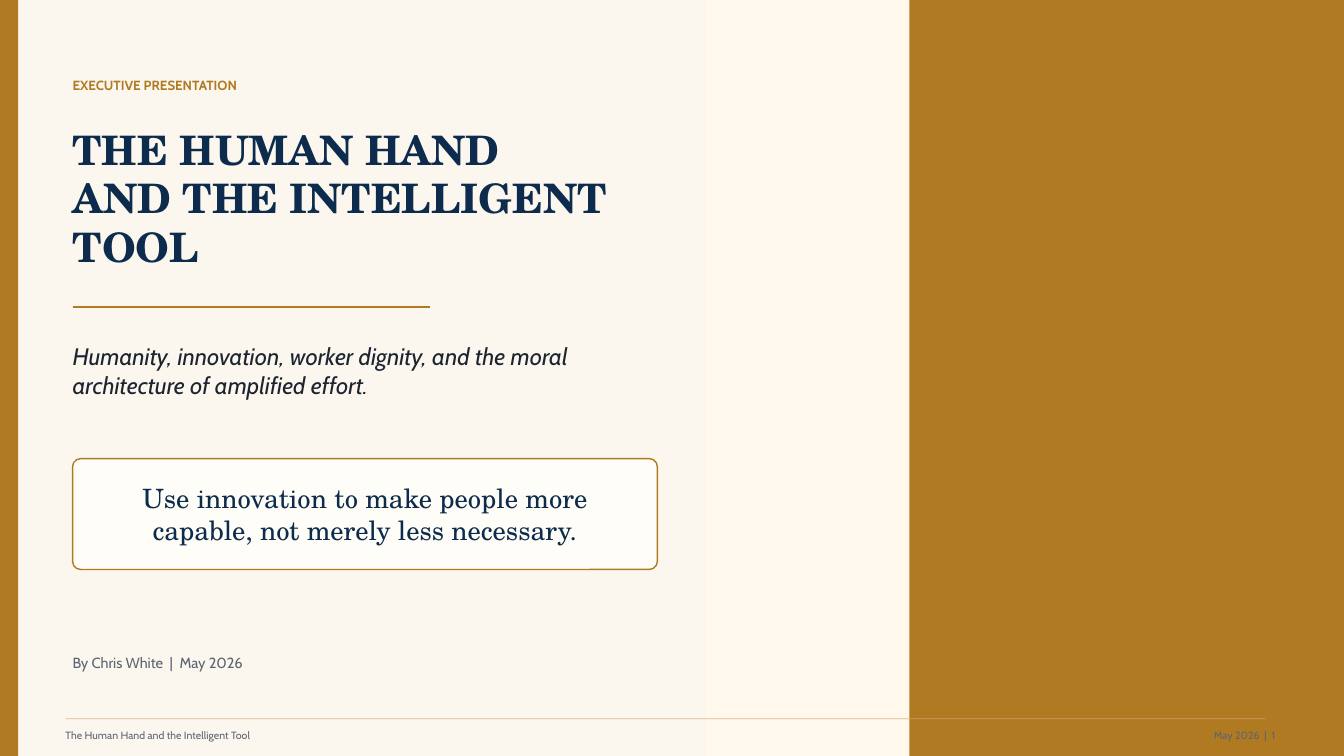
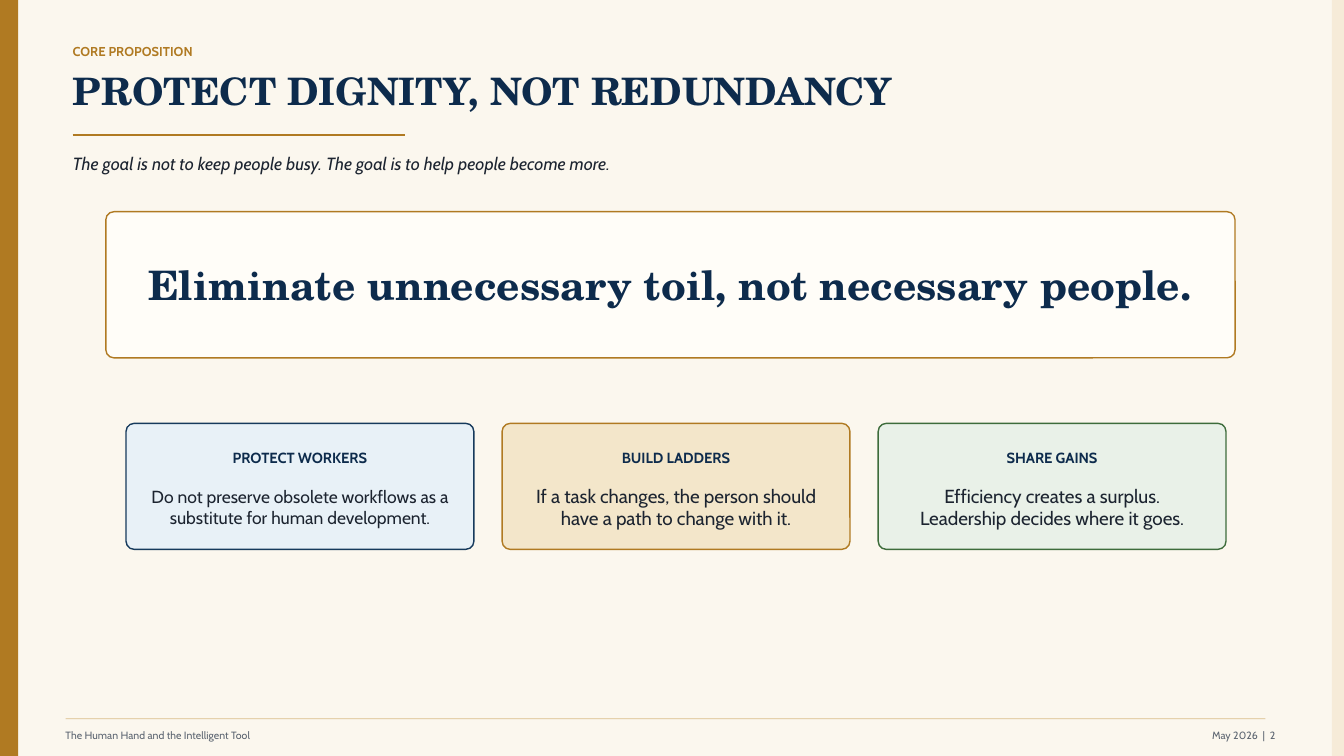
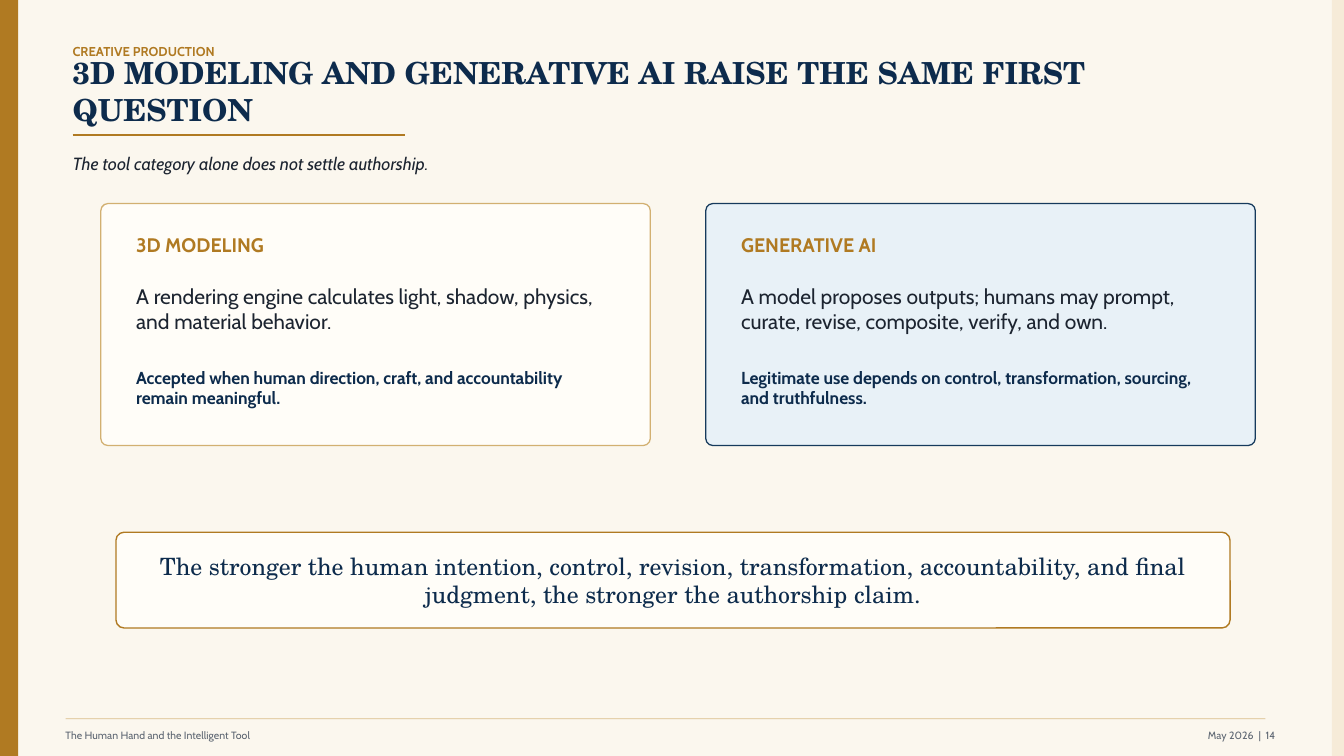
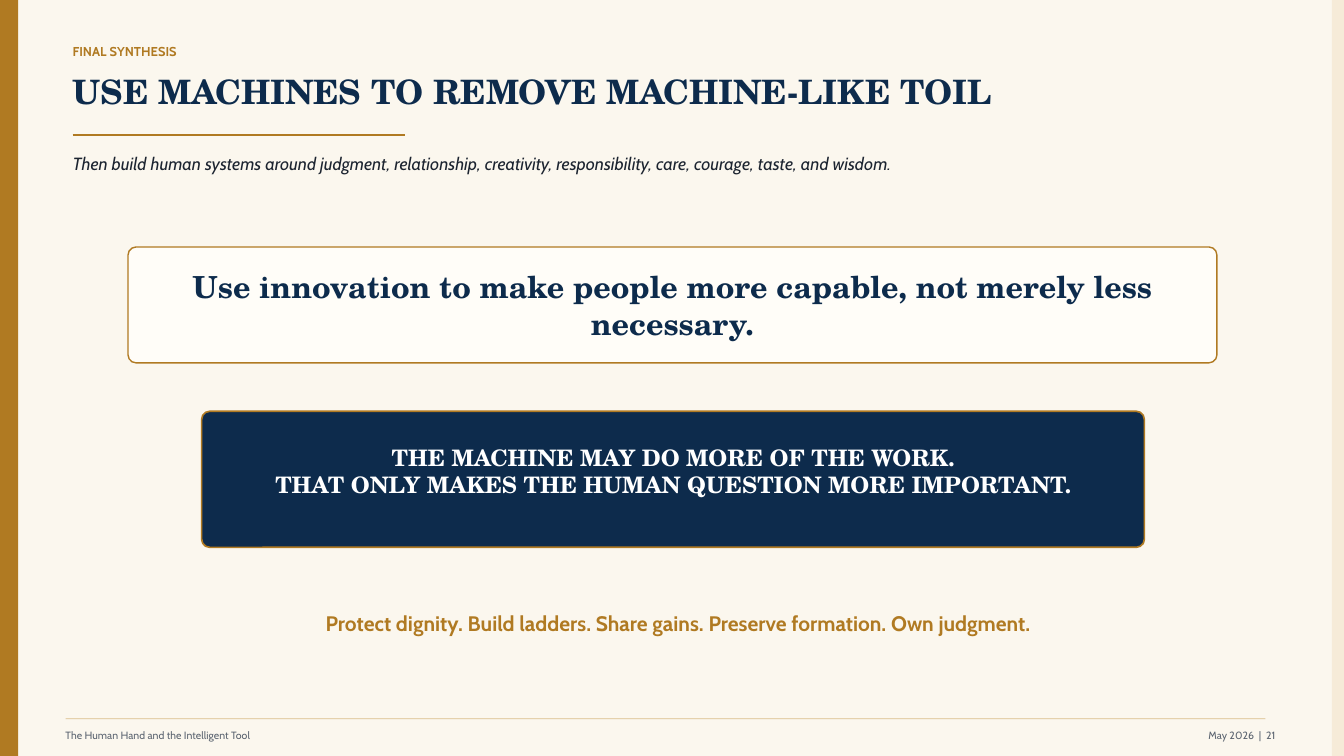
from lxml import etree
from pptx import Presentation
from pptx.dml.color import RGBColor
from pptx.enum.shapes import MSO_CONNECTOR, MSO_SHAPE
from pptx.enum.text import MSO_ANCHOR, MSO_AUTO_SIZE, PP_ALIGN
from pptx.oxml.ns import qn
from pptx.util import Inches, Pt

# Palette
PAPER = RGBColor(0xFB, 0xF7, 0xEE)
GOLD = RGBColor(0xB0, 0x7A, 0x22)
PALE_GOLD = RGBColor(0xD2, 0xB0, 0x71)
SAND = RGBColor(0xF6, 0xEB, 0xD8)
CREAM = RGBColor(0xFF, 0xF8, 0xEB)
IVORY = RGBColor(0xFF, 0xFD, 0xF8)
NAVY = RGBColor(0x0D, 0x2B, 0x4C)
EDGE_BLUE = RGBColor(0x16, 0x3A, 0x5C)
SKY = RGBColor(0xE8, 0xF1, 0xF7)
WHEAT = RGBColor(0xF3, 0xE6, 0xCA)
MINT = RGBColor(0xE9, 0xF1, 0xE8)
GREEN = RGBColor(0x3D, 0x6C, 0x3B)
INK = RGBColor(0x1C, 0x24, 0x30)
GREY = RGBColor(0x5B, 0x64, 0x70)
WHITE = RGBColor(0xFF, 0xFF, 0xFF)

# Type and page
SANS = "Cabin"
SERIF = "TeX Gyre Schola"
PAGE_W, PAGE_H = 13.33, 7.5
MARGIN = 0.72
DECK_NAME = "The Human Hand and the Intelligent Tool"
DATE = "May 2026"
MOTTO = "Use innovation to make people more capable, not merely less necessary."


# Basic elements
def write(frame, text, size, color, font=SANS, bold=False, italic=False,
          align=PP_ALIGN.LEFT, inset=0, bottom=0):
    """Fill a text frame, one paragraph per line of text."""
    frame.word_wrap = True
    frame.auto_size = MSO_AUTO_SIZE.NONE
    frame.vertical_anchor = MSO_ANCHOR.MIDDLE
    frame.margin_left = frame.margin_right = Inches(inset)
    frame.margin_top, frame.margin_bottom = 0, Inches(bottom)
    frame.text = text
    for paragraph in frame.paragraphs:
        paragraph.alignment = align
        paragraph.font.name = font
        paragraph.font.size = Pt(size)
        paragraph.font.bold = bold
        paragraph.font.italic = italic
        paragraph.font.color.rgb = color


def add_text(slide, box, text, size, color, **style):
    label = slide.shapes.add_textbox(*map(Inches, box))
    write(label.text_frame, text, size, color, **style)


def add_title(slide, box, text, size):
    title = slide.shapes.title
    title.left, title.top, title.width, title.height = map(Inches, box)
    write(title.text_frame, text, size, NAVY, font=SERIF, bold=True)


def add_band(slide, left, width, color):
    band = slide.shapes.add_shape(MSO_SHAPE.RECTANGLE, Inches(left), 0,
                                  Inches(width), Inches(PAGE_H))
    band.shadow.inherit = False
    band.fill.solid()
    band.fill.fore_color.rgb = color
    band.line.fill.background()


def add_panel(slide, box, fill, edge, edge_width=1, radius=0.08):
    panel = slide.shapes.add_shape(MSO_SHAPE.ROUNDED_RECTANGLE, *map(Inches, box))
    panel.adjustments[0] = radius / min(box[2:])
    panel.shadow.inherit = False
    panel.fill.solid()
    panel.fill.fore_color.rgb = fill
    panel.line.color.rgb = edge
    panel.line.width = Pt(edge_width)
    return panel


def add_rule(slide, left, top, length, color, width, opacity=100):
    rule = slide.shapes.add_connector(MSO_CONNECTOR.STRAIGHT, Inches(left), Inches(top),
                                      Inches(left + length), Inches(top))
    rule.line.color.rgb = color
    rule.line.width = Pt(width)
    properties = rule.element.spPr
    if opacity < 100:
        tint = properties.find(".//" + qn("a:srgbClr"))
        etree.SubElement(tint, qn("a:alpha")).set("val", str(opacity * 1000))
    etree.SubElement(properties, qn("a:effectLst"))


def add_callout(slide, box, text, size, color=NAVY, fill=IVORY, edge_width=1,
                bold=False, inset=0.35, bottom=0):
    panel = add_panel(slide, box, fill, GOLD, edge_width)
    write(panel.text_frame, text, size, color, font=SERIF, bold=bold,
          align=PP_ALIGN.CENTER, inset=inset, bottom=bottom)


# Parts every slide shares
def new_slide(prs):
    slide = prs.slides.add_slide(prs.slide_layouts[5])
    add_band(slide, 0, 0.18, GOLD)
    return slide


def add_footer(slide, number):
    add_rule(slide, 0.65, 7.13, 11.9, PALE_GOLD, 0.6, opacity=80)
    add_text(slide, (0.65, 7.18, 5.5, 0.22), DECK_NAME, 7.5, GREY)
    add_text(slide, (10.75, 7.18, 1.9, 0.22), f"{DATE}  |  {number}", 7.5, GREY,
             align=PP_ALIGN.RIGHT)


def content_slide(prs, number, section, title, title_size, subtitle):
    slide = new_slide(prs)
    add_band(slide, PAGE_W - 0.12, 0.12, SAND)
    add_text(slide, (MARGIN, 0.4, 3.5, 0.22), section, 9.2, GOLD, bold=True)
    add_title(slide, (MARGIN, 0.65, 11.9, 0.5), title, title_size)
    add_rule(slide, MARGIN, 1.34, 3.3, GOLD, 1.15)
    add_text(slide, (MARGIN, 1.47, 11.4, 0.3), subtitle, 12.6, INK, italic=True)
    add_footer(slide, number)
    return slide


# Cards
def add_principle(slide, left, heading, body, body_size, fill, edge):
    top, width, inset = 4.2, 3.45, 0.22
    text_left, text_width = left + inset, width - 2 * inset
    add_panel(slide, (left, top, width, 1.25), fill, edge)
    add_text(slide, (text_left, top + 0.18, text_width, 0.32), heading, 10.5, NAVY,
             bold=True, align=PP_ALIGN.CENTER)
    add_text(slide, (text_left, top + 0.58, text_width, 0.5), body, body_size, INK,
             align=PP_ALIGN.CENTER)


def add_comparison(slide, left, heading, body, verdict, fill, edge):
    top, text_left = 2.02, left + 0.35
    add_panel(slide, (left, top, 5.45, 2.4), fill, edge, 0.9, radius=0.07)
    add_text(slide, (text_left, top + 0.28, 4.8, 0.25), heading, 14, GOLD, bold=True)
    add_text(slide, (text_left, top + 0.73, 4.75, 0.63), body, 15, INK)
    add_text(slide, (text_left, top + 1.6, 4.75, 0.45), verdict, 12.4, NAVY, bold=True)


# Slides
def cover(prs):
    slide = new_slide(prs)
    add_band(slide, 7, PAGE_W - 7, CREAM)
    add_band(slide, 9.02, PAGE_W - 9.02, GOLD)
    add_text(slide, (MARGIN, 0.72, 4.7, 0.25), "EXECUTIVE PRESENTATION", 9.5, GOLD, bold=True)
    add_title(slide, (MARGIN, 1.15, 5.95, 1.62),
              "THE HUMAN HAND\nAND THE INTELLIGENT TOOL", 29)
    add_rule(slide, MARGIN, 3.05, 3.55, GOLD, 1.4)
    add_text(slide, (MARGIN, 3.35, 5.8, 0.65),
             "Humanity, innovation, worker dignity, and the moral architecture "
             "of amplified effort.", 17, INK, italic=True)
    add_callout(slide, (MARGIN, 4.55, 5.8, 1.1), MOTTO, 19, inset=0.23)
    add_text(slide, (MARGIN, 6.45, 4.3, 0.25), f"By Chris White  |  {DATE}", 10.5, GREY)
    add_footer(slide, 1)


def core_proposition(prs):
    slide = content_slide(
        prs, 2, "CORE PROPOSITION", "PROTECT DIGNITY, NOT REDUNDANCY", 27,
        "The goal is not to keep people busy. The goal is to help people become more.")
    add_callout(slide, (1.05, 2.1, 11.2, 1.45),
                "Eliminate unnecessary toil, not necessary people.", 29, bold=True)
    principles = [
        ("PROTECT WORKERS",
         "Do not preserve obsolete workflows as a substitute for human development.",
         12.5, SKY, EDGE_BLUE),
        ("BUILD LADDERS",
         "If a task changes, the person should have a path to change with it.",
         13.5, WHEAT, GOLD),
        ("SHARE GAINS",
         "Efficiency creates a surplus. Leadership decides where it goes.",
         13.5, MINT, GREEN),
    ]
    for column, principle in enumerate(principles):
        add_principle(slide, 1.25 + column * 3.73, *principle)


def creative_production(prs):
    slide = content_slide(
        prs, 14, "CREATIVE PRODUCTION",
        "3D MODELING AND GENERATIVE AI RAISE THE SAME FIRST QUESTION", 21.7,
        "The tool category alone does not settle authorship.")
    add_comparison(
        slide, 1, "3D MODELING",
        "A rendering engine calculates light, shadow, physics, and material behavior.",
        "Accepted when human direction, craft, and accountability remain meaningful.",
        IVORY, PALE_GOLD)
    add_comparison(
        slide, 7, "GENERATIVE AI",
        "A model proposes outputs; humans may prompt, curate, revise, composite, "
        "verify, and own.",
        "Legitimate use depends on control, transformation, sourcing, and truthfulness.",
        SKY, EDGE_BLUE)
    add_callout(slide, (1.15, 5.28, 11.05, 0.95),
                "The stronger the human intention, control, revision, transformation, "
                "accountability, and final judgment, the stronger the authorship claim.", 17)


def final_synthesis(prs):
    slide = content_slide(
        prs, 21, "FINAL SYNTHESIS", "USE MACHINES TO REMOVE MACHINE-LIKE TOIL", 24,
        "Then build human systems around judgment, relationship, creativity, "
        "responsibility, care, courage, taste, and wisdom.")
    add_callout(slide, (1.27, 2.45, 10.8, 1.15), MOTTO, 21.7, bold=True)
    add_callout(slide, (2, 4.08, 9.35, 1.35),
                "THE MACHINE MAY DO MORE OF THE WORK.\n"
                "THAT ONLY MAKES THE HUMAN QUESTION MORE IMPORTANT.", 16.2,
                color=WHITE, fill=NAVY, edge_width=1.2, bold=True, inset=0.45, bottom=0.16)
    add_text(slide, (2.1, 6, 9.25, 0.36),
             "Protect dignity. Build ladders. Share gains. Preserve formation. Own judgment.",
             15, GOLD, bold=True, align=PP_ALIGN.CENTER)


def main():
    prs = Presentation()
    prs.slide_width, prs.slide_height = Inches(PAGE_W), Inches(PAGE_H)
    paper = prs.slide_master.background.fill
    paper.solid()
    paper.fore_color.rgb = PAPER
    for build in (cover, core_proposition, creative_production, final_synthesis):
        build(prs)
    prs.save("out.pptx")


if __name__ == "__main__":
    main()
